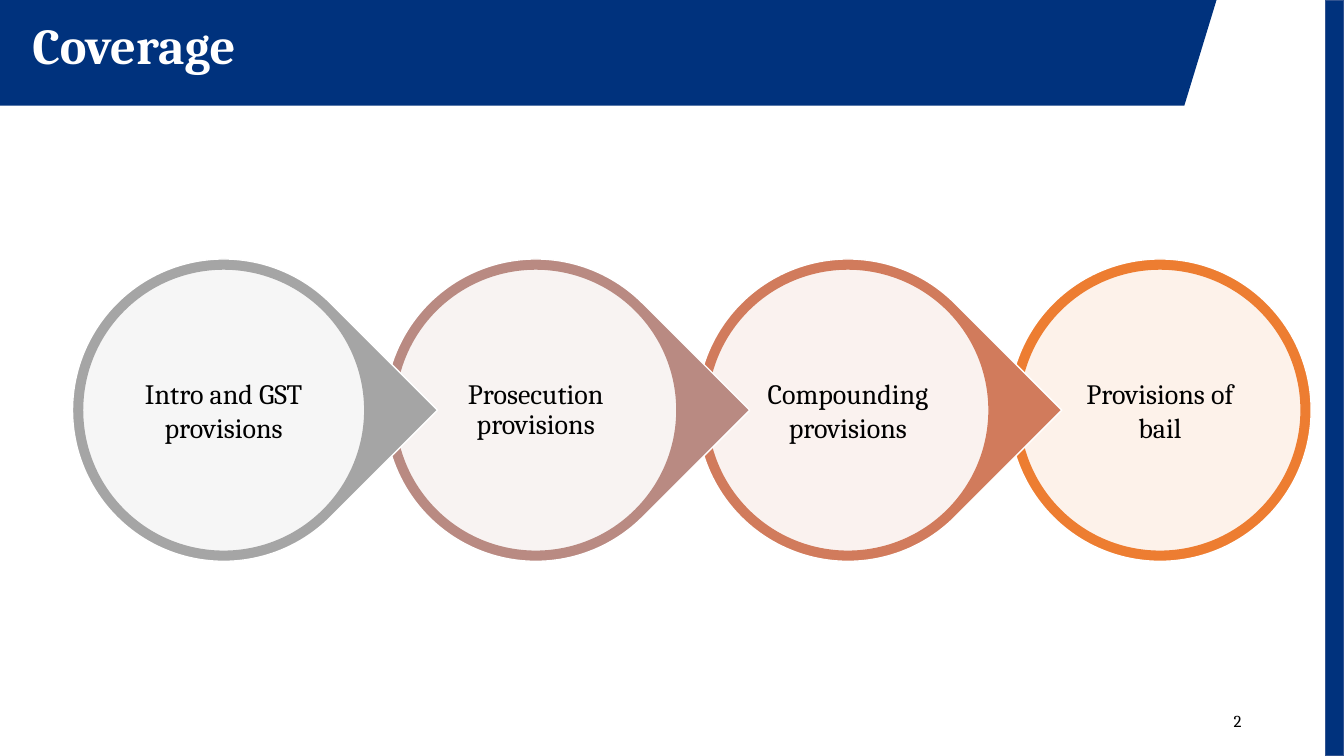
from lxml import etree
from pptx import Presentation
from pptx.dml.color import RGBColor
from pptx.enum.shapes import MSO_SHAPE
from pptx.enum.text import MSO_ANCHOR, PP_ALIGN
from pptx.oxml.ns import qn
from pptx.util import Pt

NAVY = RGBColor(0x00, 0x32, 0x7D)
NAVY_EDGE = RGBColor(0x32, 0x54, 0x91)
WHITE = RGBColor(0xFF, 0xFF, 0xFF)
BLACK = RGBColor(0x00, 0x00, 0x00)
GREY = RGBColor(0xA5, 0xA5, 0xA5)
ROSE = RGBColor(0xB9, 0x8A, 0x82)
TERRACOTTA = RGBColor(0xD1, 0x7B, 0x5C)
ORANGE = RGBColor(0xED, 0x7D, 0x31)
ELLIPSE, TEARDROP, RECTANGLE = MSO_SHAPE.OVAL, MSO_SHAPE.TEAR, MSO_SHAPE.RECTANGLE
LEFT, CENTER, RIGHT = PP_ALIGN.LEFT, PP_ALIGN.CENTER, PP_ALIGN.RIGHT
MIDDLE = MSO_ANCHOR.MIDDLE
FONT = "Cambria"
SLIDE_WIDTH, SLIDE_HEIGHT = 960, 540

TOPICS = [
    ("Intro and GST provisions", GREY, 1.0),
    ("Prosecution provisions", ROSE, 0.9),
    ("Compounding provisions", TERRACOTTA, 1.0),
    ("Provisions of bail", ORANGE, 1.0),
]


def paint(shape, fill, edge):
    """Give a shape a solid fill and a 1 pt outline, without shadow."""
    shape.shadow.inherit = False
    shape.fill.solid()
    shape.fill.fore_color.rgb = fill
    shape.line.color.rgb = edge
    shape.line.width = Pt(1)


def write(shape, text, size, color, align, bold=False, spacing=1.0):
    """Write one vertically centred, wrapped paragraph into a shape."""
    frame = shape.text_frame
    frame.word_wrap = True
    frame.vertical_anchor = MIDDLE
    frame.text = text
    paragraph = frame.paragraphs[0]
    paragraph.alignment = align
    paragraph.line_spacing = spacing
    font = paragraph.runs[0].font
    font.name, font.size, font.bold = FONT, Pt(size), bold
    font.color.rgb = color


def add_header(slide, left, top, width, height):
    """Draw the slanted banner with the slide title on it."""
    slant = 23
    builder = slide.shapes.build_freeform(Pt(left), Pt(top))
    builder.add_line_segments([
        (Pt(left), Pt(top + height)),
        (Pt(left + width - slant), Pt(top + height)),
        (Pt(left + width), Pt(top)),
    ])
    banner = builder.convert_to_shape()
    paint(banner, NAVY, NAVY)
    banner.line.fill.background()

    title = slide.shapes.title
    banner._element.addnext(title._element)
    title.left, title.top = Pt(left + 16), Pt(top + 11.5)
    title.width, title.height = Pt(662), Pt(46)
    write(title, "Coverage", 36, WHITE, LEFT, bold=True, spacing=0.9)


def add_side_bar(slide, left, top, width, height):
    """Draw the vertical bar along the slide edge."""
    bar = slide.shapes.add_shape(RECTANGLE, Pt(left), Pt(top), Pt(width), Pt(height))
    paint(bar, NAVY, NAVY_EDGE)


def add_page_number(slide, left, top, width, height):
    """Write the page number at the right of its box."""
    number = slide.shapes.add_textbox(Pt(left), Pt(top), Pt(width), Pt(height))
    write(number, "2", 12, BLACK, RIGHT)


def add_topic(slide, left, top, size, topic, is_last):
    """Draw one topic: a coloured drop or circle with a pale disc inside."""
    text, color, spacing = topic
    rim = 7.2
    drop = slide.shapes.add_shape(
        ELLIPSE if is_last else TEARDROP, Pt(left), Pt(top), Pt(size), Pt(size))
    paint(drop, color, WHITE)
    if not is_last:
        drop.adjustments[0] = 1.0
        drop.rotation = 45

    disc = slide.shapes.add_shape(
        ELLIPSE, Pt(left + rim), Pt(top + rim), Pt(size - 2 * rim), Pt(size - 2 * rim))
    paint(disc, WHITE, color)
    white = disc._element.spPr.find(qn("a:solidFill")).find(qn("a:srgbClr"))
    etree.SubElement(white, qn("a:alpha")).set("val", "90000")
    frame = disc.text_frame
    frame.margin_left = frame.margin_right = Pt(2)
    frame.margin_top = frame.margin_bottom = Pt(2)
    write(disc, text, 20, BLACK, CENTER, spacing=spacing)


def add_topic_chain(slide, left, top, width, height):
    """Spread the topics evenly, each one lying over the next."""
    last = len(TOPICS) - 1
    pitch = (width - height) / last
    for index in range(last, -1, -1):
        add_topic(slide, left + index * pitch, top, height, TOPICS[index], index == last)


def main():
    """Build the coverage slide and save it."""
    presentation = Presentation()
    presentation.slide_width = Pt(SLIDE_WIDTH)
    presentation.slide_height = Pt(SLIDE_HEIGHT)
    slide = presentation.slides.add_slide(presentation.slide_layouts[5])
    add_header(slide, 0, 0, 869, 75.5)
    add_side_bar(slide, 947, 0, 13, SLIDE_HEIGHT)
    add_page_number(slide, 678, 500.5, 216, 29)
    add_topic_chain(slide, 51.8, 185, 884.8, 216)
    presentation.save("out.pptx")


if __name__ == "__main__":
    main()
